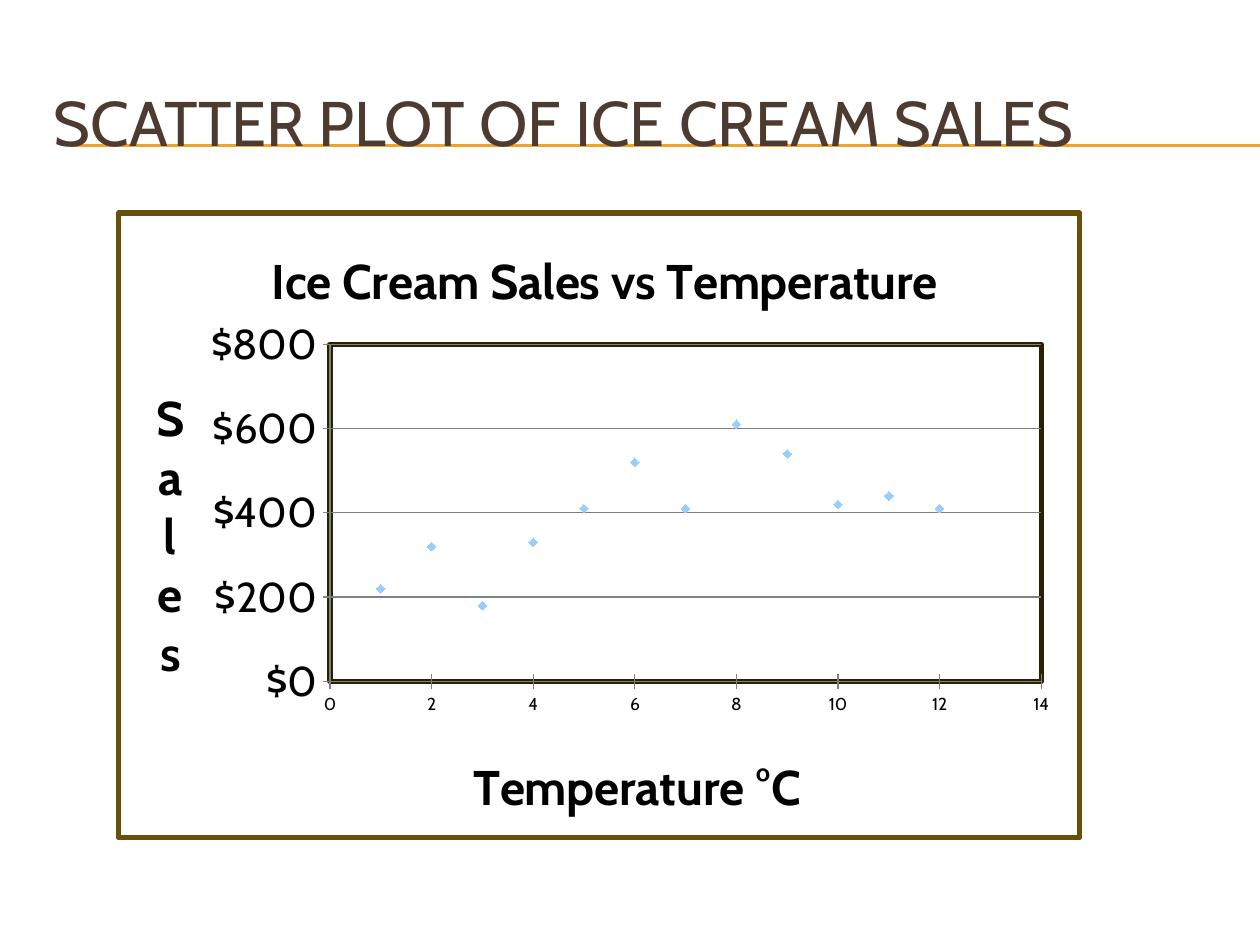
from lxml.etree import SubElement
from pptx import Presentation
from pptx.chart.data import XyChartData
from pptx.dml.color import RGBColor
from pptx.enum.chart import XL_CHART_TYPE, XL_MARKER_STYLE, XL_TICK_MARK
from pptx.enum.shapes import MSO_CONNECTOR
from pptx.enum.text import MSO_ANCHOR
from pptx.oxml import parse_xml
from pptx.oxml.ns import nsdecls, qn
from pptx.util import Inches, Pt

BROWN = RGBColor(0x4E, 0x3B, 0x30)
ORANGE = RGBColor(0xF0, 0xA2, 0x2E)
OLIVE = RGBColor(0x69, 0x50, 0x08)
DARK_OLIVE = RGBColor(0x2A, 0x20, 0x03)
LIGHT_BLUE = RGBColor(0x99, 0xCC, 0xFF)
GRAY = RGBColor(0x80, 0x80, 0x80)
BLACK = RGBColor(0, 0, 0)
WHITE = RGBColor(0xFF, 0xFF, 0xFF)
FONT = "Cabin"

SALES = [220, 320, 180, 330, 410, 520, 410, 610, 540, 420, 440, 410]


def write_text(frame, text, size=28, color=BLACK, bold=False):
    """Put one formatted span into the first paragraph of a text frame."""
    span = frame.paragraphs[0].add_run()
    span.text = text
    span.font.name = FONT
    span.font.size = Pt(size)
    span.font.bold = bold
    span.font.color.rgb = color


def place(part, index, inner=False, **fractions):
    """Fix a chart part at fractions of the chart's size; index is the layout's slot."""
    layout = part.find(qn("c:layout"))
    if layout is None:
        layout = parse_xml(f'<c:layout {nsdecls("c")}/>')
        part.insert(index, layout)
    manual = SubElement(layout, qn("c:manualLayout"))
    if inner:
        SubElement(manual, qn("c:layoutTarget")).set("val", "inner")
    for name in ("x", "y"):
        SubElement(manual, qn(f"c:{name}Mode")).set("val", "edge")
    for name, value in fractions.items():
        SubElement(manual, qn(f"c:{name}")).set("val", str(value))


def framed(color):
    """White fill with a 3 pt border, for a chart area or plot area."""
    return parse_xml(
        f'<c:spPr {nsdecls("c", "a")}>'
        f'<a:solidFill><a:srgbClr val="{WHITE}"/></a:solidFill>'
        f'<a:ln w="{Pt(3)}"><a:solidFill><a:srgbClr val="{color}"/></a:solidFill>'
        '<a:round/></a:ln></c:spPr>')


class SlideBuilder:
    def __init__(self, slide):
        self.slide = slide

    def rule(self, left, right, top):
        line = self.slide.shapes.add_connector(
            MSO_CONNECTOR.STRAIGHT, Inches(left), Inches(top), Inches(right), Inches(top))
        line.line.color.rgb = ORANGE
        line.line.width = Pt(0.75)
        SubElement(line._element.spPr, qn("a:effectLst"))

    def heading(self, text, left, top, width, height):
        box = self.slide.shapes.add_textbox(
            Inches(left), Inches(top), Inches(width), Inches(height))
        box.text_frame.word_wrap = True
        box.text_frame.vertical_anchor = MSO_ANCHOR.MIDDLE
        write_text(box.text_frame, text, size=36, color=BROWN)

    def caption(self, title, text, x, y):
        write_text(title.text_frame, text, bold=True)
        place(title._element, 1, x=x, y=y)

    def axis(self, axis, size, maximum, step, number_format):
        axis.minimum_scale = 0
        axis.maximum_scale = maximum
        axis.major_unit = step
        axis.major_tick_mark = XL_TICK_MARK.CROSS
        axis.tick_labels.font.size = Pt(size)
        axis.tick_labels.number_format = number_format
        axis.tick_labels.number_format_is_linked = False
        axis.format.line.color.rgb = GRAY

    def scatter(self, values, left, top, width, height):
        data = XyChartData()
        points = data.add_series("Series 1")
        for temperature, sales in enumerate(values, start=1):
            points.add_data_point(temperature, sales)
        chart = self.slide.shapes.add_chart(
            XL_CHART_TYPE.XY_SCATTER, Inches(left), Inches(top),
            Inches(width), Inches(height), data).chart
        chart.has_legend = False
        chart.font.name = FONT
        chart.font.size = Pt(10)
        chart.font.color.rgb = BLACK
        chart.plots[0].vary_by_categories = False

        # Markers without a joining line
        series = chart.plots[0].series[0]
        series.smooth = False
        series.format.line.fill.background()
        series.marker.style = XL_MARKER_STYLE.DIAMOND
        series.marker.size = 5
        series.marker.format.fill.solid()
        series.marker.format.fill.fore_color.rgb = LIGHT_BLUE
        series.marker.format.line.color.rgb = LIGHT_BLUE

        # Axes
        across, upward = chart.category_axis, chart.value_axis
        self.axis(across, 10, 14, 2, "General")
        self.axis(upward, 24, 800, 200, '"$"#,##0')
        across.has_major_gridlines = False
        upward.has_major_gridlines = True
        upward.major_gridlines.format.line.color.rgb = GRAY

        # Titles, the sales one stacked letter by letter
        self.caption(chart.chart_title, "Ice Cream Sales vs Temperature", 0.15, 0.04)
        self.caption(across.axis_title, "Temperature °C", 0.36, 0.85)
        self.caption(upward.axis_title, "Sales", 0.03, 0.26)
        body = upward.axis_title._element.find(".//" + qn("a:bodyPr"))
        body.set("rot", "0")
        body.set("vert", "wordArtVert")

        # Plot area position and frames
        area = chart._chartSpace.chart.plotArea
        place(area, 0, inner=True, x=0.22, y=0.21, w=0.74, h=0.54)
        area.append(framed(DARK_OLIVE))
        chart._chartSpace.chart.addnext(framed(OLIVE))


def main():
    deck = Presentation()
    deck.slide_width, deck.slide_height = Inches(10), Inches(7.5)
    page = SlideBuilder(deck.slides.add_slide(deck.slide_layouts[6]))

    # Double rule behind the heading
    for top in (1.15, 1.16):
        page.rule(0.56, 10, top)
    page.heading("SCATTER PLOT OF ICE CREAM SALES", 0.33, 0.5, 9.5, 0.92)

    # Sales against temperature
    page.scatter(SALES, 0.92, 1.67, 7.67, 5)
    deck.save("out.pptx")


if __name__ == "__main__":
    main()
